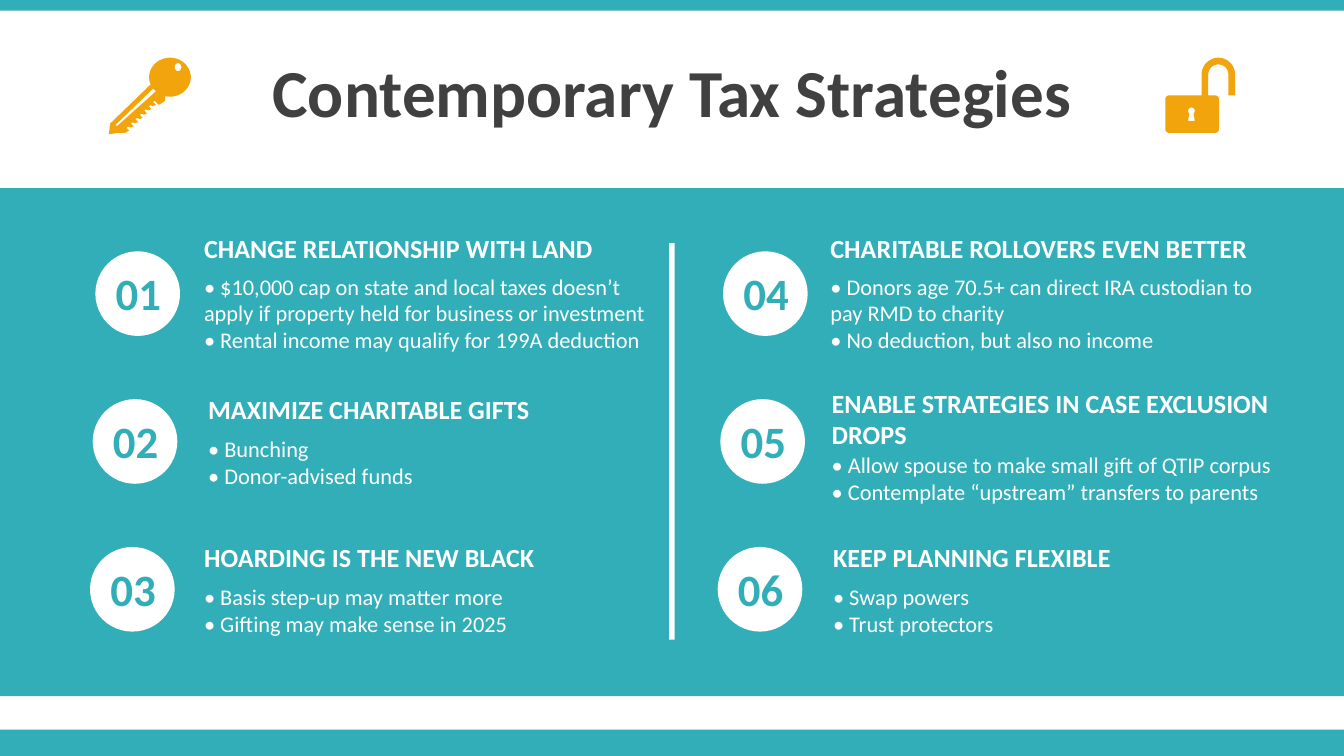
from math import cos, radians, sin

from pptx import Presentation
from pptx.dml.color import RGBColor
from pptx.enum.shapes import MSO_SHAPE
from pptx.enum.text import MSO_ANCHOR, PP_ALIGN
from pptx.util import Inches, Pt

TEAL = RGBColor(0x32, 0xAE, 0xB8)
WHITE = RGBColor(0xFF, 0xFF, 0xFF)
GRAY = RGBColor(0x40, 0x40, 0x40)
ORANGE = RGBColor(0xF2, 0xA4, 0x0D)
FONT = "Calibri"

# Content: heading, bullets, text left, heading top, bullets top, width
TITLE = "Contemporary Tax Strategies"
STRATEGIES = [
    ("CHANGE RELATIONSHIP WITH LAND",
     ["• $10,000 cap on state and local taxes doesn’t apply if property held "
      "for business or investment",
      "• Rental income may qualify for 199A deduction"],
     1.42, 1.68, 1.98, 3.56),
    ("MAXIMIZE CHARITABLE GIFTS",
     ["• Bunching", "• Donor-advised funds"],
     1.45, 2.88, 3.19, 2.91),
    ("HOARDING IS THE NEW BLACK",
     ["• Basis step-up may matter more", "• Gifting may make sense in 2025"],
     1.42, 3.98, 4.29, 2.91),
    ("CHARITABLE ROLLOVERS EVEN BETTER",
     ["• Donors age 70.5+ can direct IRA custodian to pay RMD to charity",
      "• No deduction, but also no income"],
     6.08, 1.68, 1.98, 3.38),
    ("ENABLE STRATEGIES IN CASE EXCLUSION DROPS",
     ["• Allow spouse to make small gift of QTIP corpus",
      "• Contemplate “upstream” transfers to parents"],
     6.09, 2.83, 3.31, 3.65),
    ("KEEP PLANNING FLEXIBLE",
     ["• Swap powers", "• Trust protectors"],
     6.1, 3.98, 4.29, 2.91),
]
ROWS = 3
CIRCLE = 0.63
COLUMN_LEFTS = (0.71, 5.38)
ROW_TOP, ROW_STEP, ROW_SHIFT = 1.87, 1.1, -0.02


def paint(shape, color):
    shape.fill.solid()
    shape.fill.fore_color.rgb = color
    shape.line.fill.background()
    shape.shadow.inherit = False


def add_block(slide, kind, left, top, width, height, color):
    shape = slide.shapes.add_shape(
        kind, Inches(left), Inches(top), Inches(width), Inches(height))
    paint(shape, color)


def format_text(text_frame, size, color, bold, alignment):
    text_frame.word_wrap = True
    for paragraph in text_frame.paragraphs:
        paragraph.alignment = alignment
        for run in paragraph.runs:
            run.font.name = FONT
            run.font.size = Pt(size)
            run.font.bold = bold
            run.font.color.rgb = color


def add_text(slide, lines, left, top, width, height, size, color,
             bold=False, alignment=PP_ALIGN.LEFT):
    box = slide.shapes.add_textbox(
        Inches(left), Inches(top), Inches(width), Inches(height))
    box.text_frame.text = "\n".join(lines)
    format_text(box.text_frame, size, color, bold, alignment)


def arc(center_x, center_y, radius_x, radius_y, start, end, steps=24):
    """Points along an elliptical arc, in degrees clockwise from the right."""
    angles = [radians(start + (end - start) * i / steps) for i in range(steps + 1)]
    return [(center_x + radius_x * cos(a), center_y + radius_y * sin(a)) for a in angles]


def add_icon(slide, contours):
    """Draw closed contours, in inches, as one shape; inner ones are holes."""
    points = [[(round(x * 1000), round(y * 1000)) for x, y in contour]
              for contour in contours]
    builder = slide.shapes.build_freeform(*points[0][0], scale=Inches(1) / 1000)
    builder.add_line_segments(points[0][1:], close=True)
    for contour in points[1:]:
        builder.move_to(*contour[0])
        builder.add_line_segments(contour[1:], close=True)
    paint(builder.convert_to_shape(), ORANGE)


def key_contours():
    teeth = []
    for i in range(7):
        x, y = 1.15 - 0.033 * i, 0.75 + 0.032 * i
        teeth += [(x, y), (x - 0.01, y + 0.01), (x + 0.01, y + 0.03), (x - 0.01, y + 0.04)]
    outline = (arc(1.265, 0.575, 0.155, 0.145, 111, -202, 60)
               + [(0.82, 0.92), (0.81, 1), (0.87, 0.99), (0.93, 0.99)]
               + teeth[::-1]
               + [(1.17, 0.77), (1.18, 0.78), (1.2, 0.77), (1.23, 0.75), (1.23, 0.72)])
    groove = [(1.14, 0.66), (0.86, 0.93), (0.87, 0.94), (1.16, 0.68)]
    return [outline, groove, arc(1.325, 0.5, 0.025, 0.03, 0, 360)]


def lock_contours():
    corner = 0.03
    outline = ([(8.94, 0.71)]
               + arc(9.065, 0.555, 0.125, 0.125, 180, 360)
               + [(9.19, 0.71), (9.14, 0.71)]
               + arc(9.065, 0.555, 0.075, 0.075, 0, -180)
               + [(8.99, 0.71)]
               + arc(9.04, 0.74, corner, corner, -90, 0, 6)
               + arc(9.04, 0.96, corner, corner, 0, 90, 6)
               + arc(8.7, 0.96, corner, corner, 90, 180, 6)
               + arc(8.7, 0.74, corner, corner, 180, 270, 6))
    keyhole = arc(8.865, 0.825, 0.025, 0.025, 130, 410) + [(8.89, 0.9), (8.84, 0.9)]
    return [outline, keyhole]


def main():
    # Widescreen page, 16:9
    presentation = Presentation()
    presentation.slide_width = Inches(10)
    presentation.slide_height = Inches(10) * 9 // 16
    slide = presentation.slides.add_slide(presentation.slide_layouts[5])

    # Bands and column divider
    for top, height in ((5.43, 0.2), (0, 0.08), (1.4, 3.78)):
        add_block(slide, MSO_SHAPE.RECTANGLE, 0, top, 10, height, TEAL)
    add_block(slide, MSO_SHAPE.RECTANGLE, 4.98, 1.81, 0.04, 2.95, WHITE)

    # Title
    title = slide.shapes.title
    title.left, title.top = Inches(0), Inches(0.36)
    title.width, title.height = Inches(10), Inches(0.63)
    title.text_frame.text = TITLE
    title.text_frame.vertical_anchor = MSO_ANCHOR.MIDDLE
    format_text(title.text_frame, 36, GRAY, True, PP_ALIGN.CENTER)

    # Numbered strategies, filled column by column
    for index, (heading, bullets, left, heading_top, bullets_top, width) in enumerate(STRATEGIES):
        column, row = divmod(index, ROWS)
        circle_left = COLUMN_LEFTS[column] + row * ROW_SHIFT
        circle_top = ROW_TOP + row * ROW_STEP
        add_block(slide, MSO_SHAPE.OVAL, circle_left, circle_top, CIRCLE, CIRCLE, WHITE)
        add_text(slide, [f"{index + 1:02d}"], circle_left - 0.03, circle_top + 0.06,
                 0.7, 0.5, 24, TEAL, True, PP_ALIGN.CENTER)
        add_text(slide, bullets, left, bullets_top, width, 0.5, 12, WHITE)
        add_text(slide, [heading], left, heading_top, width, 0.34, 14, WHITE, True)

    # Icons beside the title
    add_icon(slide, key_contours())
    add_icon(slide, lock_contours())

    presentation.save("out.pptx")


if __name__ == "__main__":
    main()
